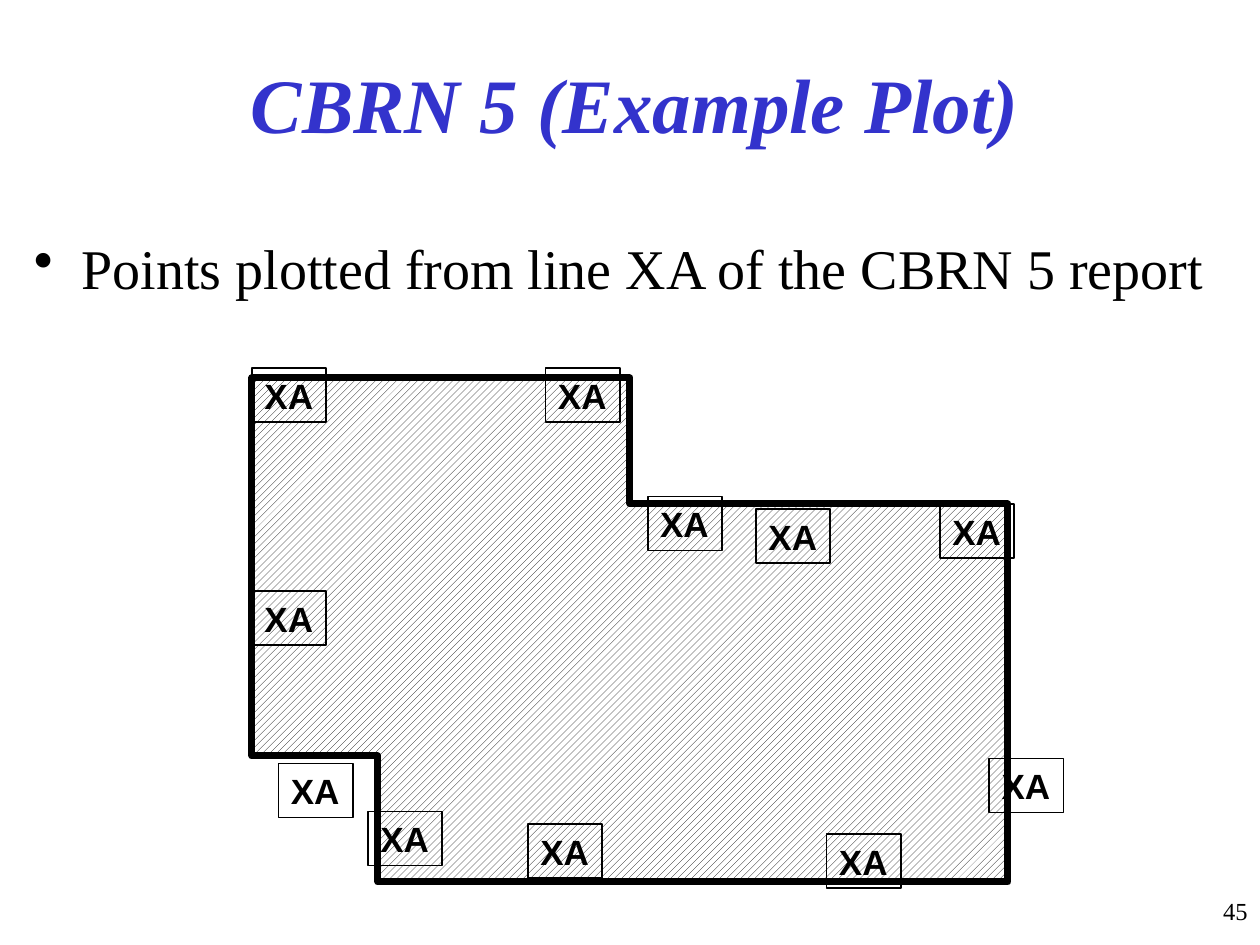
from pptx import Presentation
from pptx.dml.color import RGBColor
from pptx.enum.dml import MSO_PATTERN
from pptx.enum.shapes import MSO_SHAPE
from pptx.enum.text import MSO_ANCHOR, PP_ALIGN
from pptx.util import Inches, Pt
from lxml.etree import SubElement
from pptx.oxml.ns import qn

COLORS = {"title": "3333CC", "ink": "000000", "paper": "FFFFFF"}
SERIF, SANS = "Times New Roman", "Arial"


def color(name):
    return RGBColor.from_string(COLORS[name])


def write(shape, text, size, font=SERIF, ink="ink", bold=False, italic=False,
          align=PP_ALIGN.LEFT, wrap=True, top=0.05):
    """Put one styled run in a shape and return its paragraph."""
    frame = shape.text_frame
    frame.word_wrap = wrap
    frame.vertical_anchor = MSO_ANCHOR.TOP
    frame.margin_left = frame.margin_right = Inches(0.1)
    frame.margin_top, frame.margin_bottom = Inches(top), Inches(0.05)
    paragraph = frame.paragraphs[0]
    paragraph.alignment = align
    run = paragraph.add_run()
    run.text = text
    run.font.name, run.font.size = font, Pt(size)
    run.font.bold, run.font.italic = bold, italic
    run.font.color.rgb = color(ink)
    return paragraph


presentation = Presentation()
presentation.slide_width, presentation.slide_height = Inches(10), Inches(7.5)
slide = presentation.slides.add_slide(presentation.slide_layouts[6])

title = slide.shapes.add_textbox(Inches(0.25), Inches(0.33), Inches(9.58), Inches(1.32))
write(title, "CBRN 5 (Example Plot)", 44, ink="title", bold=True, italic=True,
      align=PP_ALIGN.CENTER, top=0.12)

body = slide.shapes.add_textbox(Inches(0.17), Inches(1.75), Inches(9.67), Inches(4.92))
bullet = write(body, "Points plotted from line XA of the CBRN 5 report", 32, top=0.1)
properties = bullet._p.get_or_add_pPr()
properties.set("marL", str(Inches(0.38)))
properties.set("indent", str(Inches(-0.38)))
SubElement(properties, qn("a:buChar")).set("char", "•")

# Contaminated area, clockwise from the top left
AREA = [
    (2.18, 3.24), (2.39, 3.2), (2.56, 3.18), (2.72, 3.13), (2.97, 3.11), (3.31, 3.07),
    (3.51, 3.05), (3.68, 3.05), (4.1, 3.09), (4.31, 3.13), (4.47, 3.18), (4.6, 3.22),
    (4.66, 3.3), (4.74, 3.45), (4.78, 3.53), (4.87, 3.78), (4.89, 3.9), (5.01, 4.03),
    (5.14, 4.18), (5.31, 4.26), (5.35, 4.32), (5.51, 4.34), (5.76, 4.38), (6.1, 4.38),
    (6.43, 4.34), (6.56, 4.3), (6.72, 4.28), (6.85, 4.26), (7.06, 4.24), (7.39, 4.24),
    (7.64, 4.28), (7.72, 4.34), (7.81, 4.43), (7.87, 4.59), (7.91, 4.72), (7.95, 4.88),
    (8.01, 5.05), (8.03, 5.26), (8.08, 5.43), (8.1, 5.55), (8.1, 5.72), (8.14, 5.78),
    (8.14, 6.05), (8.1, 6.13), (8.1, 6.26), (8.06, 6.38), (8.01, 6.47), (7.81, 6.68),
    (7.68, 6.72), (7.51, 6.78), (7.35, 6.82), (7.18, 6.86), (6.89, 6.9), (6.68, 6.93),
    (6.01, 6.93), (5.85, 6.9), (5.64, 6.9), (5.35, 6.88), (5.18, 6.86), (5.01, 6.86),
    (4.85, 6.84), (4.26, 6.84), (4.1, 6.82), (3.93, 6.82), (3.76, 6.8), (3.6, 6.8),
    (3.18, 6.76), (2.97, 6.63), (2.72, 6.59), (2.56, 6.43), (2.43, 6.38), (2.35, 6.3),
    (2.28, 6.09), (2.26, 5.88), (2.24, 5.72), (2.24, 5.59), (2.22, 5.53), (2.2, 5.32),
    (2.2, 3.97), (2.22, 3.88), (2.22, 3.8), (2.24, 3.74), (2.24, 3.49), (2.2, 3.36),
    (2.2, 3.3),
]
plot = slide.shapes.add_group_shape()
builder = plot.shapes.build_freeform(*AREA[0], scale=Inches(1))
builder.add_line_segments(AREA[1:], close=True)
area = builder.convert_to_shape()
area.shadow.inherit = False
area.fill.patterned()
area.fill.pattern = MSO_PATTERN.WIDE_UPWARD_DIAGONAL
area.fill.fore_color.rgb = color("ink")
area.fill.back_color.rgb = color("paper")
area.line.color.rgb = color("ink")
area.line.width = Pt(4)
SubElement(area.line._get_or_add_ln(), qn("a:round"))

XA_POINTS = [
    (2, 2.92), (4.33, 2.92), (5.14, 3.94), (6, 4.04), (7.46, 4), (7.85, 6.02),
    (6.56, 6.62), (4.19, 6.54), (2.92, 6.44), (2.21, 6.06), (2, 4.69),
]
for left, top in XA_POINTS:
    label = plot.shapes.add_shape(MSO_SHAPE.RECTANGLE, Inches(left), Inches(top),
                                  Inches(0.59), Inches(0.43))
    label.shadow.inherit = False
    label.fill.background()
    label.line.color.rgb = color("ink")
    label.line.width = Pt(1)
    write(label, "XA", 20, font=SANS, bold=True, wrap=False)

page_number = slide.shapes.add_textbox(Inches(7.67), Inches(7.06), Inches(2.33), Inches(0.44))
write(page_number, "45", 14, align=PP_ALIGN.RIGHT)

presentation.save("out.pptx")
